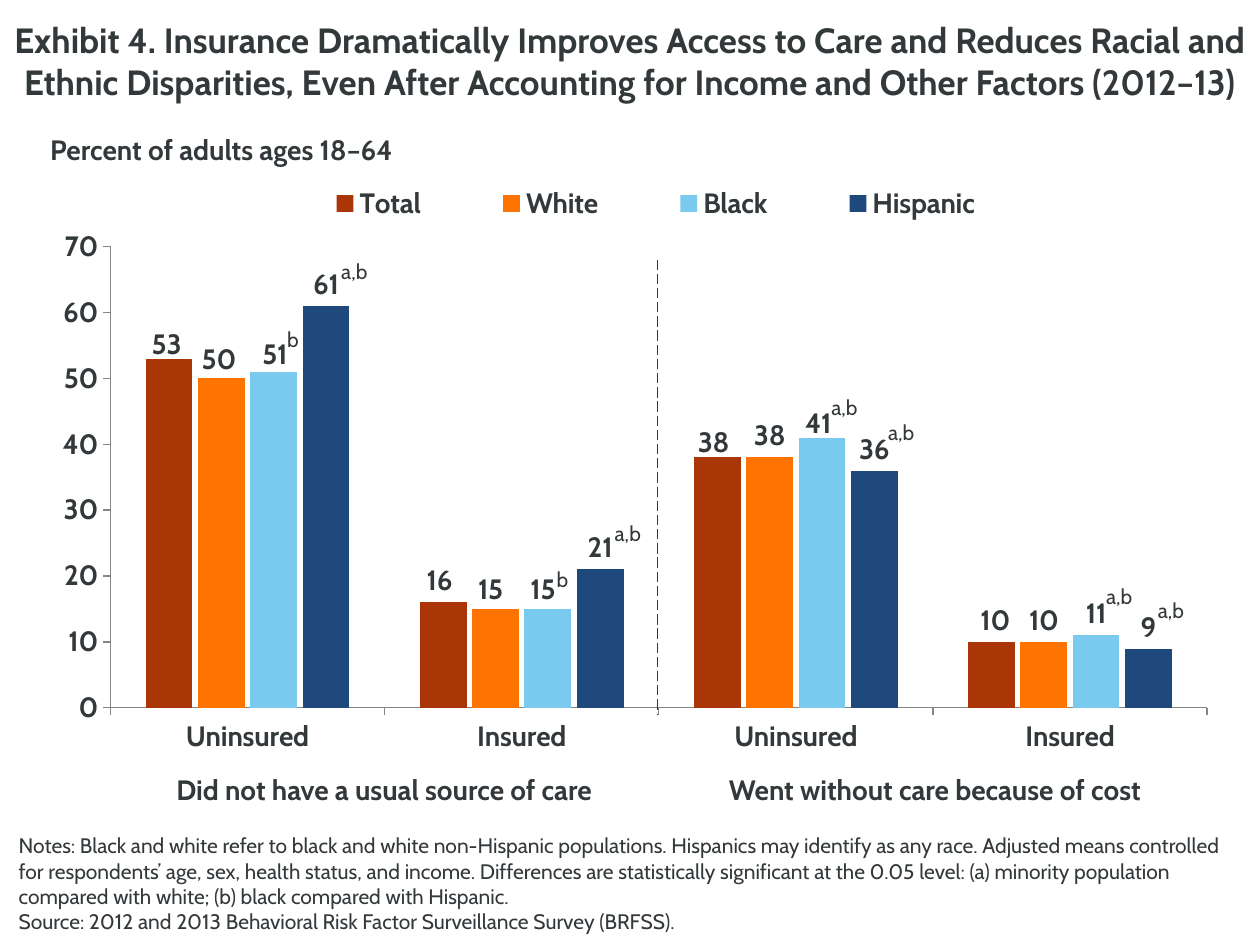
import pptx
import pptx.chart.data
import pptx.dml.color
import pptx.enum.chart
import pptx.enum.dml
import pptx.enum.shapes
import pptx.enum.text
import pptx.oxml
import pptx.oxml.ns
import pptx.util

Inches, Pt = pptx.util.Inches, pptx.util.Pt
Align, Anchor = pptx.enum.text.PP_ALIGN, pptx.enum.text.MSO_ANCHOR
FONT = "Cabin"
COLORS = {"ink": "33383B", "axis": "868686", "Total": "AA3607", "White": "FF7300",
          "Black": "7AC9EF", "Hispanic": "1F497D"}
CATEGORIES = ["Uninsured", "Insured", "Uninsured", "Insured"]
SERIES = {"Total": [53, 16, 38, 10], "White": [50, 15, 38, 10],
          "Black": [51, 15, 41, 11], "Hispanic": [61, 21, 36, 9]}
# Value labels moved off their standard place: point -> (right, down) in inches
NUDGES = {"Total": {0: (-0.02, 0.06), 1: (-0.03, 0), 2: (-0.03, 0.05), 3: (0.03, 0)},
          "White": {0: (-0.02, 0.02), 1: (-0.04, 0.02)},
          "Black": {0: (0.01, 0.03), 1: (-0.04, 0.02), 2: (-0.03, 0.06)}}
# Significance marks: text, left, top
MARKS = [("b", 2.18, 2.54), ("a,b", 2.61, 2), ("b", 4.32, 4.45), ("a,b", 4.78, 4.08),
         ("a,b", 6.5, 3.08), ("a,b", 6.95, 3.28), ("a,b", 8.68, 4.58), ("a,b", 9.09, 4.69)]


def color(name):
    return pptx.dml.color.RGBColor.from_string(COLORS[name])


def style_font(font, size, bold=False):
    font.name, font.size, font.bold = FONT, Pt(size), bold
    font.color.rgb = color("ink")


def add_text(page, box, text, size, bold=False, align=Align.LEFT, anchor=Anchor.TOP, wrap=True):
    frame = page.shapes.add_textbox(*map(Inches, box)).text_frame
    frame.word_wrap, frame.vertical_anchor = wrap, anchor
    frame.text = text
    for para in frame.paragraphs:
        para.alignment = align
        for span in para.runs:
            style_font(span.font, size, bold)


def make_layout(tag_values):
    """Manual chart layout from (tag, value) pairs."""
    parts = "".join(f'<c:{tag} val="{value}"/>' for tag, value in tag_values)
    return pptx.oxml.parse_xml(
        f'<c:layout {pptx.oxml.ns.nsdecls("c")}><c:manualLayout>{parts}</c:manualLayout></c:layout>')


def box_layout(x, y, width, height, inner=False):
    target = [("layoutTarget", "inner")] if inner else []
    return make_layout(target + [("xMode", "edge"), ("yMode", "edge"),
                                 ("x", x), ("y", y), ("w", width), ("h", height)])


def style_axis(axis):
    style_font(axis.tick_labels.font, 16, True)
    axis.has_major_gridlines = False
    axis.major_tick_mark = pptx.enum.chart.XL_TICK_MARK.OUTSIDE
    axis.minor_tick_mark = pptx.enum.chart.XL_TICK_MARK.NONE
    axis.format.line.color.rgb = color("axis")
    axis.format.line.width = Pt(0.75)


def style_series(series, width, height):
    series.format.fill.solid()
    series.format.fill.fore_color.rgb = color(series.name)
    series.invert_if_negative = False
    outside = pptx.enum.chart.XL_LABEL_POSITION.OUTSIDE_END
    labels = series.data_labels
    labels.show_value, labels.position = True, outside
    style_font(labels.font, 16, True)
    for point, (right, down) in NUDGES.get(series.name, {}).items():
        label = series.points[point].data_label
        style_font(label.font, 16, True)
        label.position = outside
        element = labels._element.xpath(f'c:dLbl[c:idx/@val="{point}"]')[0]
        element.insert(1, make_layout([("x", round(right / width, 4)),
                                       ("y", round(down / height, 4))]))


def add_access_chart(page, box):
    data = pptx.chart.data.CategoryChartData()
    data.categories = CATEGORIES
    for name, values in SERIES.items():
        data.add_series(name, values)
    chart = page.shapes.add_chart(pptx.enum.chart.XL_CHART_TYPE.COLUMN_CLUSTERED,
                                  *map(Inches, box), data).chart
    style_font(chart.font, 16, True)
    chart.has_title = False

    # Plot and axes
    plot_area = chart._chartSpace.chart.plotArea
    for old in plot_area.xpath("c:layout"):
        plot_area.remove(old)
    plot_area.insert(0, box_layout(0.058, 0.132, 0.923, 0.771, inner=True))
    plot = chart.plots[0]
    plot.gap_width, plot.overlap, plot.vary_by_categories = 151, -12, False
    style_axis(chart.category_axis)
    style_axis(chart.value_axis)
    chart.value_axis.minimum_scale, chart.value_axis.maximum_scale = 0, 70
    chart.value_axis.major_unit = 10
    for series in plot.series:
        style_series(series, *box[2:])

    # Legend spread along the top
    chart.has_legend = True
    legend = chart.legend
    legend.position = pptx.enum.chart.XL_LEGEND_POSITION.TOP
    legend.include_in_layout = False
    style_font(legend.font, 16, True)
    for old in legend._element.xpath("c:layout"):
        legend._element.remove(old)
    legend._element.xpath("c:legendPos")[0].addnext(box_layout(0.187, 0.02, 0.66, 0.08))


def add_divider(page, x, top, bottom):
    line = page.shapes.add_connector(pptx.enum.shapes.MSO_CONNECTOR.STRAIGHT,
                                     *map(Inches, (x, top, x, bottom)))
    line.line.color.rgb = color("ink")
    line.line.width = Pt(0.75)
    line.line.dash_style = pptx.enum.dml.MSO_LINE.LONG_DASH
    line._element.spPr.append(pptx.oxml.parse_xml(f'<a:effectLst {pptx.oxml.ns.nsdecls("a")}/>'))


def add_marks(page):
    for text, left, top in MARKS:
        add_text(page, (left, top, 0.41 if text == "a,b" else 0.29, 0.3), text, 12, wrap=False)


def add_notes(page, box):
    add_text(page, box,
             "Notes: Black and white refer to black and white non-Hispanic populations. "
             "Hispanics may identify as any race. Adjusted means controlled for respondents’ "
             "age, sex, health status, and income. Differences are statistically significant "
             "at the 0.05 level: (a) minority population compared with white; (b) black "
             "compared with Hispanic.\n"
             "Source: 2012 and 2013 Behavioral Risk Factor Surveillance Survey (BRFSS).",
             12, anchor=Anchor.BOTTOM)


def main():
    deck = pptx.Presentation()
    deck.slide_width, deck.slide_height = Inches(10), Inches(7.5)
    page = deck.slides.add_slide(deck.slide_layouts[6])

    # Headings
    add_text(page, (0, 0.1, 10, 1.1),
             "Exhibit 4. Insurance Dramatically Improves Access to Care and Reduces Racial and "
             "Ethnic Disparities, Even After Accounting for Income and Other Factors (2012–13)",
             20, True, Align.CENTER)
    add_text(page, (0.3, 1, 2.95, 0.37), "Percent of adults ages 18–64", 16, True, wrap=False)

    # Chart with its group captions, divider and marks
    add_access_chart(page, (0.33, 1.33, 9.43, 4.75))
    captions = ["Did not have a usual source of care", "Went without care because of cost"]
    for index, caption in enumerate(captions):
        add_text(page, (0.87 + 4.37 * index, 6.08, 4.36, 0.37), caption, 16, True, Align.CENTER)
    add_divider(page, 5.22, 2.06, 5.67)
    add_marks(page)

    add_notes(page, (0.05, 6.55, 9.95, 0.91))
    deck.save("out.pptx")


if __name__ == "__main__":
    main()
